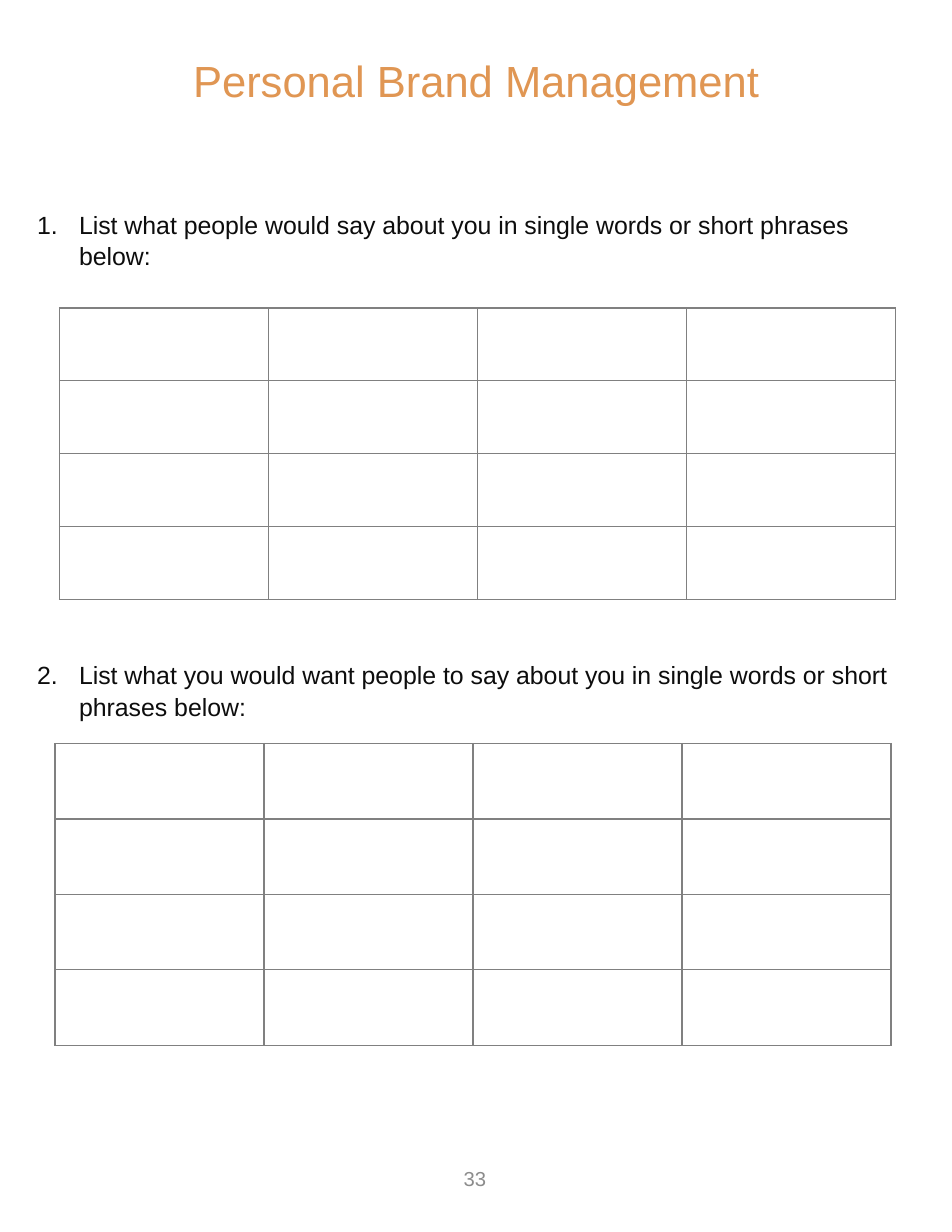
from lxml import etree
from pptx import Presentation
from pptx.dml.color import RGBColor
from pptx.enum import text
from pptx.oxml import ns
from pptx.util import Pt


def colour(value):
    return RGBColor.from_string(value)


def apply(target, values):
    for name, value in values.items():
        setattr(target, name, value)


class Worksheet:
    """Holds the style and the current page of a fill-in worksheet."""

    font = "Arial"
    accent, ink, muted, rule = "E09653", "0D0D0D", "8C8C8C", "808080"
    inset = 3.6
    indent = 27

    def __init__(self, deck):
        self.page = deck.slides.add_slide(deck.slide_layouts[1])

    def place(self, box, left, top, width, height):
        apply(box, {"left": Pt(left), "top": Pt(top),
                    "width": Pt(width), "height": Pt(height)})

    def frame(self, box, **values):
        sides = ("margin_left", "margin_top", "margin_right", "margin_bottom")
        base = dict.fromkeys(sides, Pt(self.inset))
        base.update(word_wrap=True, auto_size=text.MSO_AUTO_SIZE.NONE)
        apply(box.text_frame, {**base, **values})
        return box.text_frame

    def add_words(self, para, words, size, ink, **values):
        span = para.add_run()
        span.text = words
        apply(span.font, {"name": self.font, "size": Pt(size)})
        span.font.color.rgb = colour(ink)
        apply(para, {"space_before": Pt(0), **values})

    def title(self, words, *area):
        box = self.page.shapes.title
        self.place(box, *area)
        frame = self.frame(box, vertical_anchor=text.MSO_ANCHOR.MIDDLE)
        self.add_words(frame.paragraphs[0], words, 28, self.accent,
                       alignment=text.PP_ALIGN.CENTER, line_spacing=0.9)

    def questions(self, items, gap, first_offset, *area):
        box = self.page.placeholders[1]
        self.place(box, *area)
        frame = self.frame(box, margin_top=Pt(first_offset),
                           vertical_anchor=text.MSO_ANCHOR.TOP)
        for index, words in enumerate(items):
            para = frame.add_paragraph() if index else frame.paragraphs[0]
            props = para._p.get_or_add_pPr()
            props.set("marL", str(Pt(self.indent)))
            props.set("indent", str(-Pt(self.indent)))
            etree.SubElement(props, ns.qn("a:buFont"), typeface=self.font)
            etree.SubElement(props, ns.qn("a:buAutoNum"), type="arabicPeriod")
            self.add_words(para, words, 16, self.ink, line_spacing=1.05,
                           space_before=Pt(gap if index else 0))

    def border(self, cell):
        props = cell._tc.get_or_add_tcPr()
        for side in ("lnL", "lnR", "lnT", "lnB"):
            line = etree.SubElement(props, ns.qn(f"a:{side}"), w=str(Pt(1)))
            fill = etree.SubElement(line, ns.qn("a:solidFill"))
            etree.SubElement(fill, ns.qn("a:srgbClr"), val=self.rule)

    def grid(self, left, top, column, row, count=4):
        table = self.page.shapes.add_table(
            count, count, Pt(left), Pt(top),
            Pt(column * count), Pt(row * count)).table
        apply(table, {"first_row": False, "horz_banding": False})
        for index in range(count):
            table.columns[index].width = Pt(column)
            table.rows[index].height = Pt(row)
        for cell in table.iter_cells():
            self.border(cell)
            cell.fill.background()

    def number(self, words, *area):
        box = self.page.shapes.add_textbox(*map(Pt, area))
        frame = self.frame(box, vertical_anchor=text.MSO_ANCHOR.MIDDLE)
        self.add_words(frame.paragraphs[0], words, 13, self.muted,
                       alignment=text.PP_ALIGN.CENTER)


def main():
    deck = Presentation()
    apply(deck, {"slide_width": Pt(612), "slide_height": Pt(792)})
    sheet = Worksheet(deck)
    sheet.questions(
        ["List what people would say about you in single words or short "
         "phrases below:",
         "List what you would want people to say about you in single words "
         "or short phrases below:"],
        249.4, 22.8, 20.2, 110.9, 573.1, 511.2)
    sheet.title("Personal Brand Management", 31.7, 34.6, 548.6, 38.2)
    sheet.grid(38.2, 198, 134.4, 46.8)
    sheet.grid(35.3, 478, 134.4, 48.5)
    sheet.number("33", 234, 736.6, 142.6, 42.5)
    deck.save("out.pptx")


if __name__ == "__main__":
    main()
